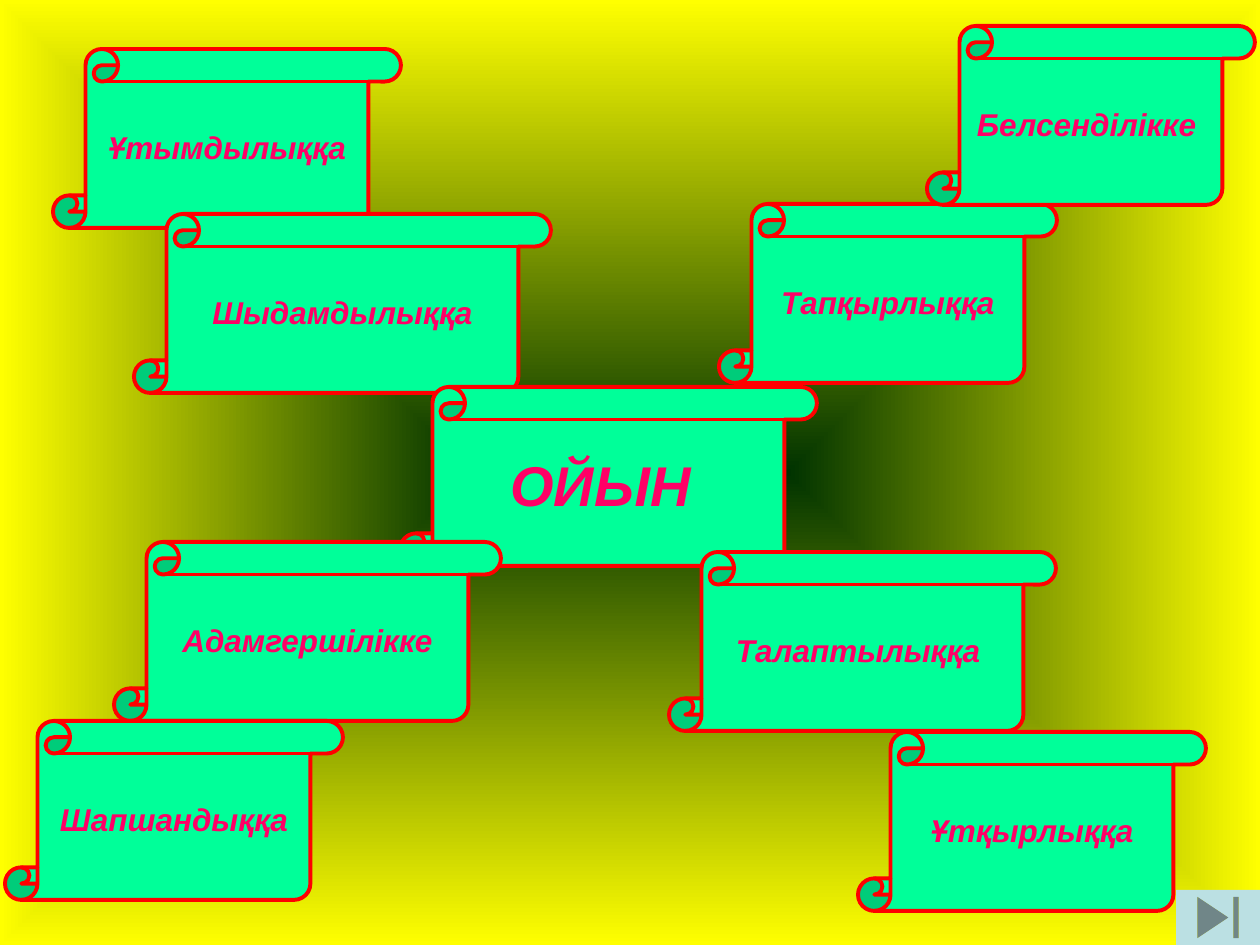
from dataclasses import dataclass

from lxml import etree
from pptx import Presentation
from pptx.dml.color import RGBColor
from pptx.enum.shapes import MSO_SHAPE
from pptx.enum.text import MSO_ANCHOR, PP_ALIGN
from pptx.oxml.ns import qn
from pptx.util import Pt

SCROLL = MSO_SHAPE.VERTICAL_SCROLL
END = MSO_SHAPE.ACTION_BUTTON_END
MIDDLE = MSO_ANCHOR.MIDDLE
CENTER = PP_ALIGN.CENTER

SCALE = 914400 / 126  # EMU in one px
WIDE, HIGH = 1260, 945
TALL = 179  # every scroll has this height


@dataclass(frozen=True)
class Theme:
    font: str = "Arial"
    core: str = "003300"
    rim: str = "FFFF00"
    paper: str = "00FF99"
    edge: str = "FF0000"
    ink: str = "FF0066"
    button: str = "BBE0E3"
    body: int = 18
    title: int = 32
    stroke: float = 2.25
    curl: float = 0.182


def px(num):
    return round(num * SCALE)


def color(code):
    return RGBColor.from_string(code)


class Page:
    def __init__(self, deck, theme):
        self.theme = theme
        self.slide = deck.slides.add_slide(deck.slide_layouts[6])

    def backdrop(self):
        """Gradient that spreads from the centre to the slide edges."""
        fill = self.slide.background.fill
        fill.gradient()
        codes = (self.theme.core, self.theme.rim)
        for stop, place, code in zip(fill.gradient_stops, (0, 1), codes):
            stop.position = place
            stop.color.rgb = color(code)
        grad = self.slide.element.find(".//" + qn("a:gradFill"))
        grad.remove(grad.find(qn("a:lin")))
        route = etree.SubElement(grad, qn("a:path"), {"path": "shape"})
        sides = {side: "50000" for side in "ltrb"}
        etree.SubElement(route, qn("a:fillToRect"), sides)

    def shape(self, kind, box, fill):
        item = self.slide.shapes.add_shape(kind, *map(px, box))
        item.shadow.inherit = False
        item.fill.solid()
        item.fill.fore_color.rgb = color(fill)
        return item

    def scroll(self, text, left, top, width, size):
        look = self.theme
        item = self.shape(SCROLL, (left, top, width, TALL), look.paper)
        item.adjustments[0] = look.curl
        item.line.color.rgb = color(look.edge)
        item.line.width = Pt(look.stroke)
        frame = item.text_frame
        frame.text = text
        frame.word_wrap = False
        frame.vertical_anchor = MIDDLE
        line = frame.paragraphs[0]
        line.alignment = CENTER
        font = line.runs[0].font
        font.name, font.size = look.font, Pt(size)
        font.bold = font.italic = True
        font.color.rgb = color(look.ink)

    def button(self, *box):
        self.shape(END, box, self.theme.button).line.fill.background()


def main():
    theme = Theme()
    deck = Presentation()
    deck.slide_width, deck.slide_height = px(WIDE), px(HIGH)
    page = Page(deck, theme)
    page.backdrop()

    # Scrolls from back to front: text, left, top, width, type size
    scrolls = (
        ("Ұтымдылыққа", 53, 49, 348, theme.body),
        ("Шыдамдылыққа", 134, 214, 417, theme.body),
        ("ОЙЫН ", 400, 387, 417, theme.title),
        ("Ұтқырлыққа", 858, 732, 348, theme.body),
        ("Талаптылыққа ", 669, 552, 387, theme.body),
        ("Тапқырлыққа", 719, 204, 338, theme.body),
        ("Адамгершілікке", 114, 542, 387, theme.body),
        ("Белсенділікке ", 927, 26, 328, theme.body),
        ("Шапшандыққа", 5, 721, 338, theme.body),
    )
    for item in scrolls:
        page.scroll(*item)

    # Button in the lower right corner
    page.button(1176, 890, 84, 55)
    deck.save("out.pptx")


if __name__ == "__main__":
    main()
